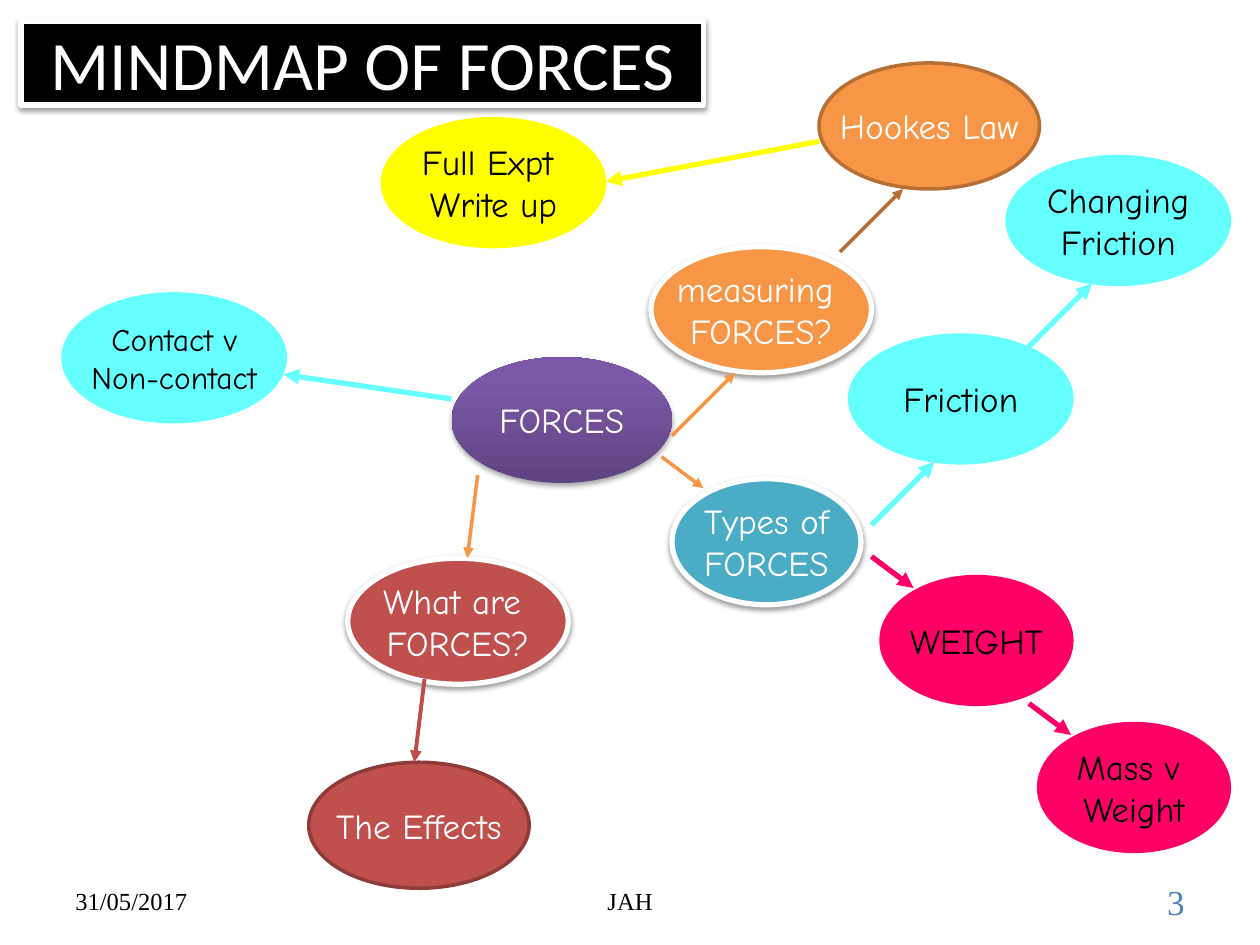
from copy import deepcopy
from dataclasses import dataclass
from typing import Optional

from lxml import etree
from pptx import Presentation
from pptx.dml.color import RGBColor
from pptx.enum import shapes, text
from pptx.oxml import ns
from pptx.util import Pt

COLOURS = {
    "black": "000000",
    "white": "FFFFFF",
    "blue": "4F81BD",
    "orange": "F79646",
    "dark orange": "B76F34",
    "red": "C0504D",
    "arrow red": "BF4C48",
    "dark red": "8E3B39",
    "teal": "4BACC6",
    "cyan": "66FFFF",
    "pink": "FF0066",
    "yellow": "FFFF00",
}
PURPLE_STOPS = [(0, "5F4480"), (0.8, "7B58A6"), (1, "7C57A8")]
BUBBLE_HEIGHT = 72
WIDE, NARROW = 126, 108


@dataclass
class Bubble:
    lines: list[str]
    left: float
    top: float
    fill: Optional[str]
    outline: Optional[str]
    font_colour: str = "white"
    width: float = WIDE
    line_width: float = 3
    size: float = 20
    shadow: Optional[tuple[float, float, int]] = None  # blur, distance, opacity %


@dataclass
class Arrow:
    start: tuple[float, float]
    end: tuple[float, float]
    colour: str
    width: float


@dataclass
class Footer:
    words: str
    left: float
    width: float
    alignment: text.PP_ALIGN
    size: float = 14
    colour: str = "black"


SOFT = (3.1, 1.6, 38)

BUBBLES = [
    Bubble(["FORCES"], 258, 204, None, None, shadow=(3.1, 1.8, 35)),
    Bubble(["What are ", "FORCES?"], 198.7, 319, "red", "white", shadow=SOFT),
    Bubble(["measuring ", "FORCES?"], 372, 141, "orange", "white", shadow=SOFT),
    Bubble(["Types of", "FORCES"], 384, 273.6, "teal", "white", width=NARROW, shadow=SOFT),
    Bubble(["Friction"], 486, 192, "cyan", "cyan", "black"),
    Bubble(["WEIGHT"], 504, 330, "pink", "pink", "black", NARROW),
    Bubble(["The Effects"], 176.4, 435.6, "red", "dark red", line_width=2),
    Bubble(["Hookes Law"], 468, 36, "orange", "dark orange", line_width=2),
    Bubble(["Mass v ", "Weight"], 594, 414, "pink", "pink", "black", NARROW),
    Bubble(["Contact v", "Non-contact"], 36.5, 168.5, "cyan", "cyan", "black", size=18),
    Bubble(["Changing", "Friction"], 576, 90, "cyan", "cyan", "black"),
    Bubble(["Full Expt ", "Write up"], 219, 68.4, "yellow", "yellow", "black"),
]

ARROWS = [
    Arrow((273, 271.4), (267, 319), "orange", 2),
    Arrow((384, 249), (420, 213), "orange", 2),
    Arrow((378, 261), (402, 279), "orange", 2),
    Arrow((498, 300), (534, 264), "cyan", 3),
    Arrow((498, 318), (522, 336), "pink", 3),
    Arrow((242.6, 388), (236.8, 435.6), "arrow red", 2.25),
    Arrow((480, 144), (516, 108), "dark orange", 2),
    Arrow((588, 402), (612, 420), "pink", 3),
    Arrow((258, 228), (162, 214), "cyan", 3),
    Arrow((588, 198), (624, 162), "cyan", 3),
    Arrow((468, 80.8), (346.3, 103.7), "yellow", 3),
]

FOOTERS = [
    Footer("3", 516, 168, text.PP_ALIGN.RIGHT, 20, "blue"),
    Footer("31/05/2017", 36, 168, text.PP_ALIGN.LEFT),
    Footer("JAH", 246, 228, text.PP_ALIGN.CENTER),
]


def rgb(name: str) -> RGBColor:
    return RGBColor.from_string(COLOURS[name])


def write(shape, lines: list[str], font: str, size: float, colour: str,
          alignment=text.PP_ALIGN.CENTER, wrap: bool = True) -> None:
    frame = shape.text_frame
    frame.word_wrap = wrap
    frame.vertical_anchor = text.MSO_ANCHOR.MIDDLE
    frame.text = "\n".join(lines)
    for paragraph in frame.paragraphs:
        paragraph.alignment = alignment
        paragraph.font.name = font
        paragraph.font.size = Pt(size)
        paragraph.font.color.rgb = rgb(colour)


def set_shadow(shape, shadow: Optional[tuple[float, float, int]]) -> None:
    """Give the shape a downward shadow, or none at all."""
    shape.shadow.inherit = False
    if shadow is None:
        return
    blur, distance, opacity = shadow
    effects = shape._element.spPr.find(ns.qn("a:effectLst"))
    outer = etree.SubElement(effects, ns.qn("a:outerShdw"), blurRad=str(Pt(blur)),
                             dist=str(Pt(distance)), dir="5400000", rotWithShape="0")
    colour = etree.SubElement(outer, ns.qn("a:srgbClr"), val=COLOURS["black"])
    etree.SubElement(colour, ns.qn("a:alpha"), val=str(opacity * 1000))


def fill_purple(shape) -> None:
    """Fill with three gradient stops, dark at the bottom."""
    shape.fill.gradient()
    shape.fill.gradient_angle = 90
    stop_list = shape._element.spPr.find(".//" + ns.qn("a:gsLst"))
    stop_list.insert(1, deepcopy(stop_list[0]))
    for stop, (position, colour) in zip(shape.fill.gradient_stops, PURPLE_STOPS):
        stop.position = position
        stop.color.rgb = RGBColor.from_string(colour)


def paint(shape, fill: str, outline: str, width: float) -> None:
    shape.fill.solid()
    shape.fill.fore_color.rgb = rgb(fill)
    shape.line.color.rgb = rgb(outline)
    shape.line.width = Pt(width)


def draw_title(slide) -> None:
    shape = slide.shapes.add_shape(shapes.MSO_SHAPE.RECTANGLE, Pt(12), Pt(12), Pt(390), Pt(48))
    paint(shape, "black", "white", 3)
    set_shadow(shape, SOFT)
    write(shape, ["MINDMAP OF FORCES"], "Calibri", 39.6, "white")


def draw_bubble(slide, bubble: Bubble) -> None:
    shape = slide.shapes.add_shape(shapes.MSO_SHAPE.OVAL, Pt(bubble.left), Pt(bubble.top),
                                   Pt(bubble.width), Pt(BUBBLE_HEIGHT))
    if bubble.fill and bubble.outline:
        paint(shape, bubble.fill, bubble.outline, bubble.line_width)
    else:
        fill_purple(shape)
        shape.line.fill.background()
    set_shadow(shape, bubble.shadow)
    write(shape, bubble.lines, "Comic Neue", bubble.size, bubble.font_colour, wrap=False)


def draw_arrow(slide, arrow: Arrow) -> None:
    connector = slide.shapes.add_connector(shapes.MSO_CONNECTOR.STRAIGHT,
                                           *map(Pt, arrow.start + arrow.end))
    connector.line.color.rgb = rgb(arrow.colour)
    connector.line.width = Pt(arrow.width)
    etree.SubElement(connector.line._get_or_add_ln(), ns.qn("a:tailEnd"), type="triangle")
    etree.SubElement(connector._element.spPr, ns.qn("a:effectLst"))


def draw_footer(slide, footer: Footer) -> None:
    box = slide.shapes.add_textbox(Pt(footer.left), Pt(500.5), Pt(footer.width), Pt(28.75))
    write(box, [footer.words], "Times New Roman", footer.size, footer.colour, footer.alignment)


def main() -> None:
    presentation = Presentation()
    presentation.slide_width, presentation.slide_height = Pt(720), Pt(540)
    slide = presentation.slides.add_slide(presentation.slide_layouts[6])
    for footer in FOOTERS:
        draw_footer(slide, footer)
    draw_title(slide)
    for bubble in BUBBLES:
        draw_bubble(slide, bubble)
    for arrow in ARROWS:
        draw_arrow(slide, arrow)
    presentation.save("out.pptx")


if __name__ == "__main__":
    main()
